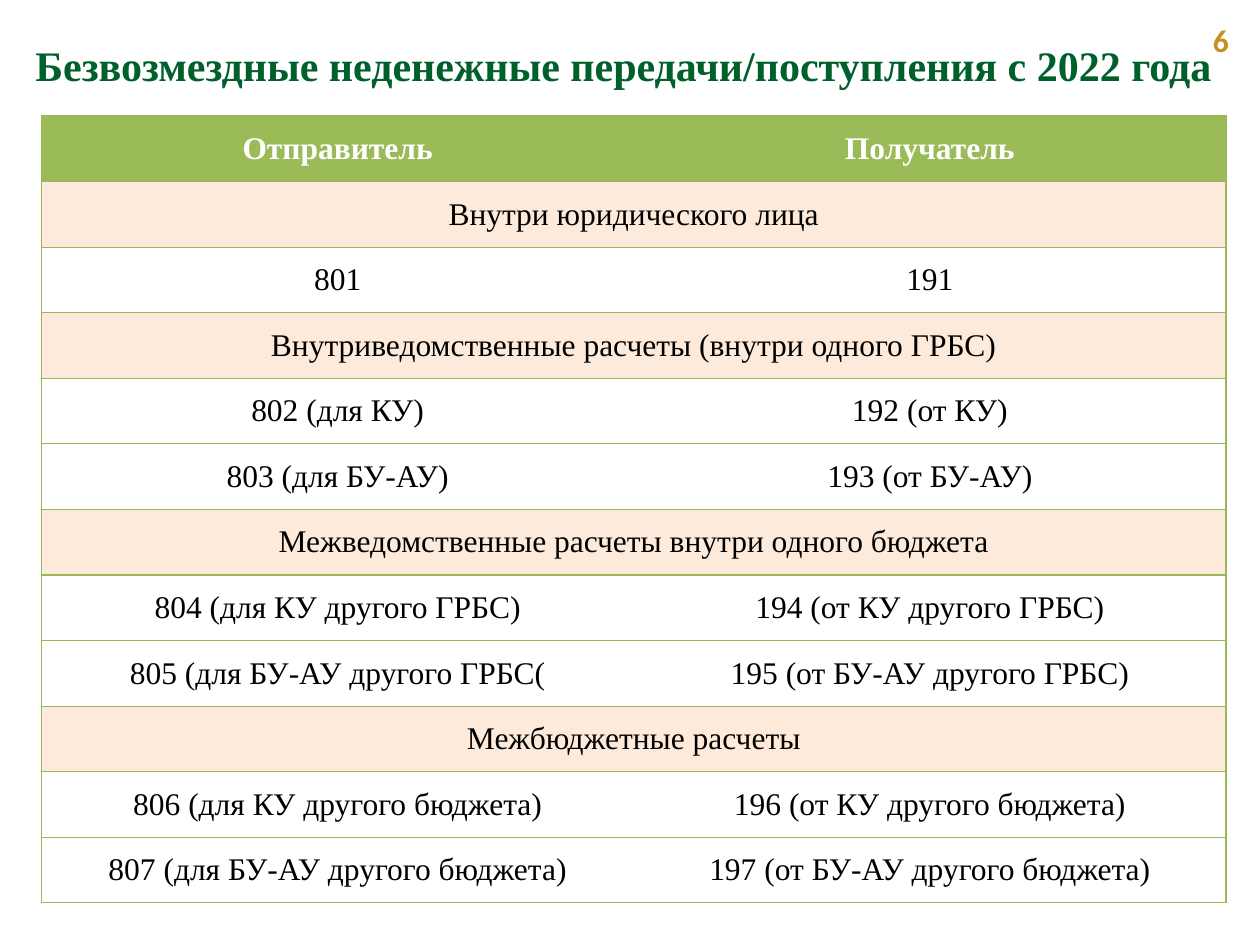
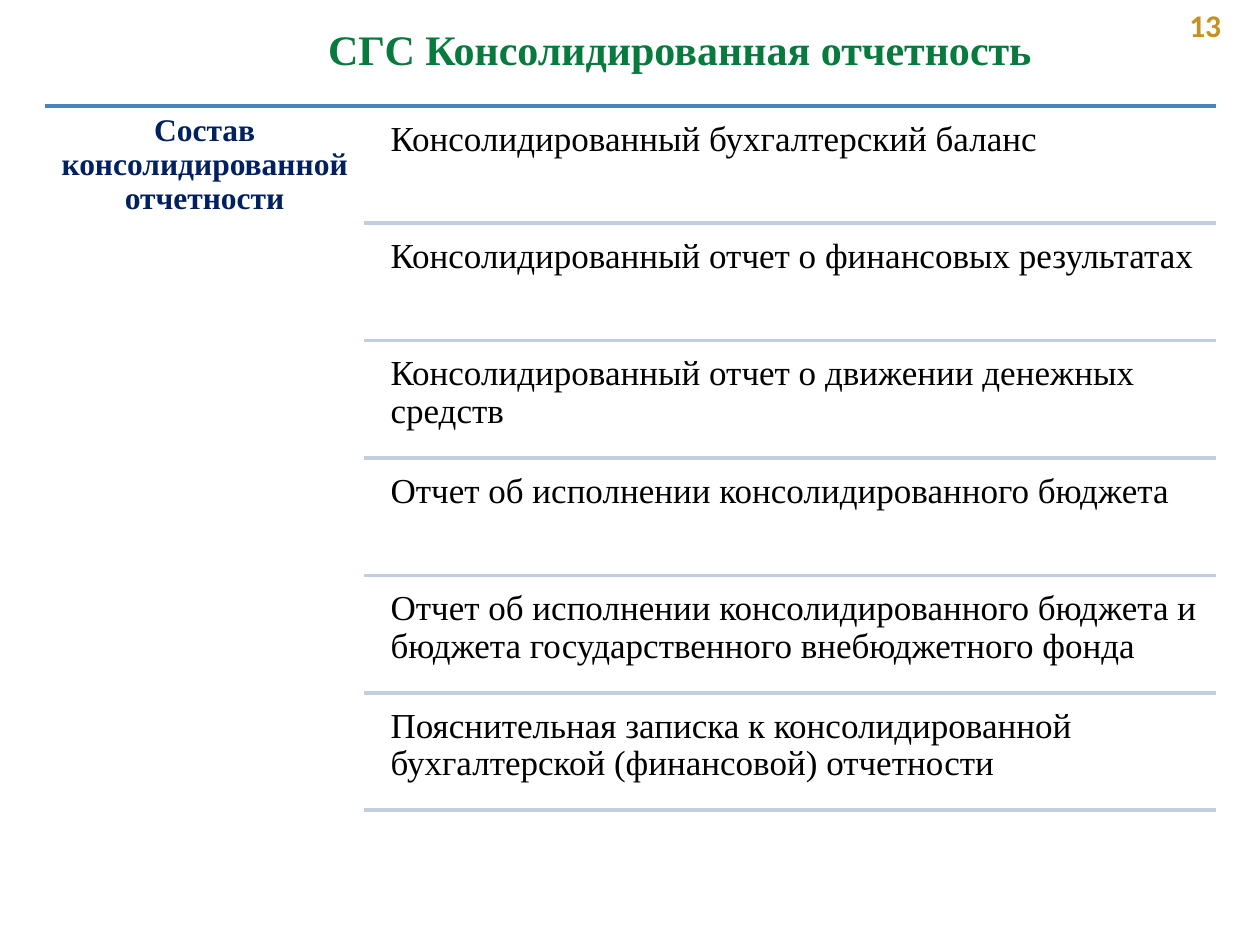
from lxml import etree
from pptx import Presentation
from pptx import util as u
from pptx.dml.color import RGBColor
from pptx.enum import shapes, text
from pptx.oxml.ns import qn

WIDTH, HEIGHT = 10, 7.5
SERIF, SANS = "Times New Roman", "Calibri"
COLORS = {
    "dark green": "00602B", "green": "077A3E", "gold": "C79023",
    "header": "9BBB59", "border": "98B955", "section": "FDEADA",
    "white": "FFFFFF", "black": "000000", "navy": "002060",
    "top rule": "4F81BD", "row rule": "C2CDE1",
}

TRANSFERS = {
    "title": "Безвозмездные неденежные передачи/поступления с 2022 года",
    "page": "6",
    "header": ("Отправитель", "Получатель"),
    "sections": [
        ("Внутри юридического лица", [("801", "191")]),
        ("Внутриведомственные расчеты (внутри одного ГРБС)", [
            ("802 (для КУ)", "192 (от КУ)"),
            ("803 (для БУ-АУ)", "193 (от БУ-АУ)")]),
        ("Межведомственные расчеты внутри одного бюджета", [
            ("804 (для КУ другого ГРБС)", "194 (от КУ другого ГРБС)"),
            ("805 (для БУ-АУ другого ГРБС(", "195 (от БУ-АУ другого ГРБС)")]),
        ("Межбюджетные расчеты", [
            ("806 (для КУ другого бюджета)", "196 (от КУ другого бюджета)"),
            ("807 (для БУ-АУ другого бюджета)", "197 (от БУ-АУ другого бюджета)")]),
    ],
}
REPORTING = {
    "title": "СГС Консолидированная отчетность",
    "page": "13",
    "heading": "Состав консолидированной отчетности",
    "reports": [
        "Консолидированный бухгалтерский баланс",
        "Консолидированный отчет о финансовых результатах",
        "Консолидированный отчет о движении денежных средств",
        "Отчет об исполнении консолидированного бюджета",
        "Отчет об исполнении консолидированного бюджета и бюджета "
        "государственного внебюджетного фонда",
        "Пояснительная записка к консолидированной бухгалтерской "
        "(финансовой) отчетности",
    ],
}
LEFT, CENTER, RIGHT = text.PP_ALIGN.LEFT, text.PP_ALIGN.CENTER, text.PP_ALIGN.RIGHT
MIDDLE, TOP = text.MSO_ANCHOR.MIDDLE, text.MSO_ANCHOR.TOP


def rgb(color):
    return RGBColor.from_string(COLORS[color])


def write(frame, words, size, color, bold=False, align=CENTER, font=SERIF):
    paragraph = frame.paragraphs[0]
    paragraph.text = words
    paragraph.alignment = align
    paragraph.font.name = font
    paragraph.font.size = u.Pt(size)
    paragraph.font.bold = bold
    paragraph.font.color.rgb = rgb(color)
    return paragraph


def add_text(slide, box, words, size, color, anchor=TOP, inset=None, spacing=None, **style):
    frame = slide.shapes.add_textbox(*map(u.Inches, box)).text_frame
    frame.word_wrap = True
    frame.vertical_anchor = anchor
    if inset is not None:
        frame.margin_left = frame.margin_right = u.Inches(inset)
        frame.margin_top = frame.margin_bottom = u.Inches(inset)
    paragraph = write(frame, words, size, color, **style)
    if spacing:
        paragraph.line_spacing = spacing


def add_slide(deck, content, title_box, title_color, page_box):
    slide = deck.slides.add_slide(deck.slide_layouts[6])
    add_text(slide, title_box, content["title"], 24, title_color, MIDDLE, bold=True)
    add_text(slide, page_box, content["page"], 18, "gold", bold=True, align=RIGHT, font=SANS)
    return slide


def add_rule(slide, left, right, y, color):
    rule = slide.shapes.add_connector(
        shapes.MSO_CONNECTOR.STRAIGHT, *map(u.Inches, (left, y, right, y)))
    rule.line.color.rgb = rgb(color)
    rule.line.width = u.Pt(2)
    etree.SubElement(rule._element.spPr, qn("a:effectLst"))


def set_borders(cell, visible):
    """Draw the sides named in visible (letters of LRTB) and clear the others."""
    properties = cell._tc.get_or_add_tcPr()
    for side in "LRTB":
        line = etree.SubElement(properties, qn(f"a:ln{side}"), w=str(u.Pt(0.75)))
        if side in visible:
            fill = etree.SubElement(line, qn("a:solidFill"))
            etree.SubElement(fill, qn("a:srgbClr"), val=COLORS["border"])
        else:
            etree.SubElement(line, qn("a:noFill"))


def build_transfers(deck):
    slide = add_slide(deck, TRANSFERS, (0, 0.25, 9.9, 0.53), "dark green",
                      (9.16, 0.12, 0.69, 0.4))
    rows = [(TRANSFERS["header"], "header")]
    for section, codes in TRANSFERS["sections"]:
        rows.append(((section,), "section"))
        rows += [(pair, "white") for pair in codes]

    box = (0.33, 0.92, 9.4, 6.25)
    table = slide.shapes.add_table(len(rows), 2, *map(u.Inches, box)).table
    table.first_row = table.horz_banding = False
    for r, (words, fill) in enumerate(rows):
        if len(words) == 1:
            table.cell(r, 0).merge(table.cell(r, 1))
        for c, outer in enumerate("LR"):
            cell = table.cell(r, c)
            set_borders(cell, "LRTB" if len(words) == 1 else outer + "TB")
            cell.fill.solid()
            cell.fill.fore_color.rgb = rgb(fill)
            cell.vertical_anchor = MIDDLE
            if c < len(words):
                is_header = fill == "header"
                write(cell.text_frame, words[c], 18,
                      "white" if is_header else "black", bold=is_header)


def build_reporting(deck):
    slide = add_slide(deck, REPORTING, (2.14, 0.2, 6.51, 0.37), "green",
                      (9.07, 0, 0.72, 0.4))
    left, split, right, top, bottom = 0.36, 2.89, 9.65, 0.84, 6.43
    gap, indent = 0.04, 0.13
    pitch = (bottom - top) / len(REPORTING["reports"])
    add_rule(slide, left, right, top, "top rule")
    add_text(slide, (left, top, split - left, bottom - top), REPORTING["heading"], 18, "navy",
             inset=0.07, spacing=0.9, bold=True)
    for i, report in enumerate(REPORTING["reports"]):
        y = top + i * pitch
        add_text(slide, (split + indent, y + gap, right - split - indent, pitch - gap),
                 report, 20, "black", inset=0.08, spacing=0.9, align=LEFT)
        add_rule(slide, split, right, y + pitch, "row rule")


def main():
    deck = Presentation()
    deck.slide_width, deck.slide_height = u.Inches(WIDTH), u.Inches(HEIGHT)
    build_transfers(deck)
    build_reporting(deck)
    deck.save("out.pptx")


if __name__ == "__main__":
    main()
